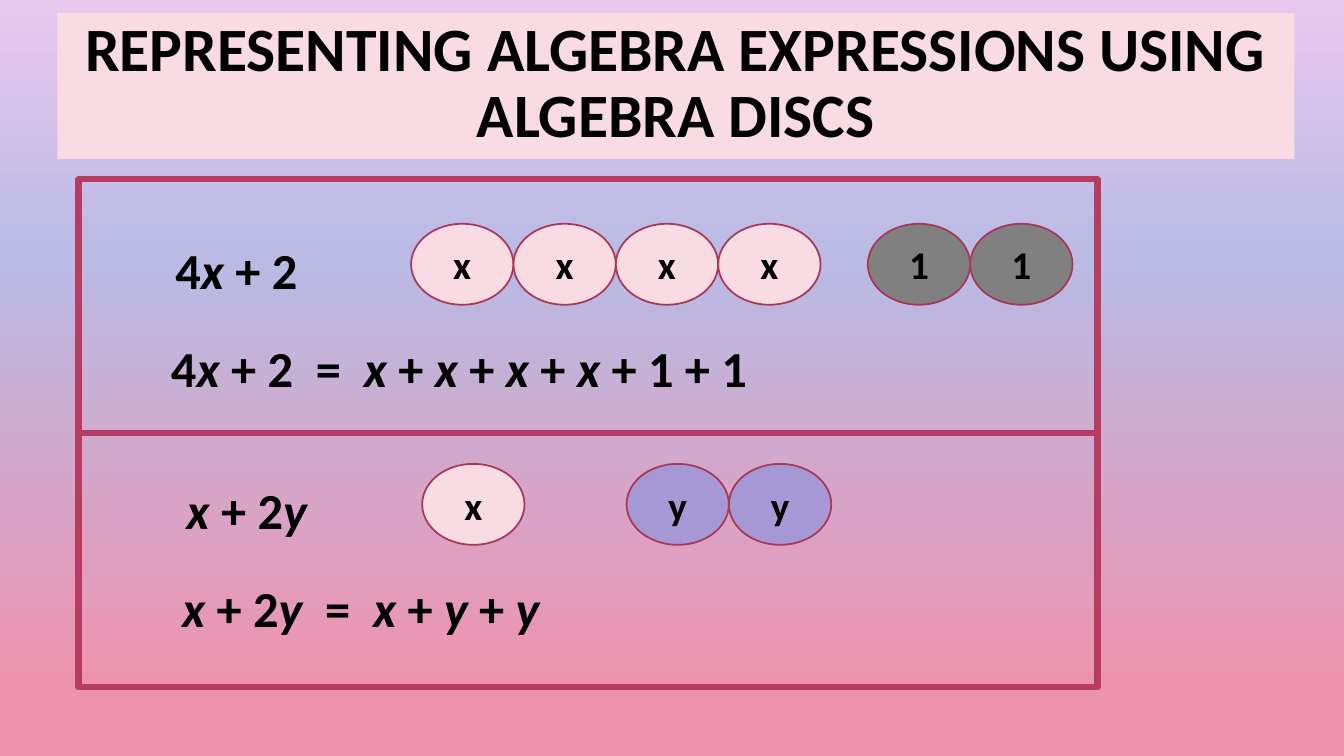
from copy import deepcopy
from itertools import groupby

from pptx import Presentation
from pptx.dml.color import RGBColor
from pptx.enum.shapes import MSO_SHAPE as Kind
from pptx.enum.text import MSO_ANCHOR as Anchor, MSO_AUTO_SIZE as Fit, PP_ALIGN as Align
from pptx.oxml.ns import qn
from pptx.util import Cm, Pt

BLACK = RGBColor(0x00, 0x00, 0x00)
PINK = RGBColor(0xF9, 0xDB, 0xE4)
GREY = RGBColor(0x80, 0x80, 0x80)
LILAC = RGBColor(0xA5, 0x98, 0xD4)
RIM = RGBColor(0xA8, 0x37, 0x5A)
FRAME = RGBColor(0xB6, 0x3C, 0x62)
SKY = [
    (0, RGBColor(0xE9, 0xC8, 0xEF)),
    (0.34, RGBColor(0xB9, 0xBB, 0xE5)),
    (0.91, RGBColor(0xEE, 0x93, 0xAF)),
]


def add_run(para, text, size, slant=False):
    run = para.add_run()
    run.text = text
    font = run.font
    font.name, font.size = "Calibri", Pt(size)
    font.bold, font.italic = True, slant
    font.color.rgb = BLACK


def add_form(kind, box, fill=None, line=None, width=0):
    form = slide.shapes.add_shape(kind, *map(Cm, box))
    form.shadow.inherit = False
    if fill is None:
        form.fill.background()
    else:
        form.fill.solid()
        form.fill.fore_color.rgb = fill
    if line is None:
        form.line.fill.background()
    else:
        form.line.color.rgb = line
        form.line.width = Pt(width)
    return form


deck = Presentation()
deck.slide_width, deck.slide_height = Cm(33.87), Cm(19.05)
slide = deck.slides.add_slide(deck.slide_layouts[6])

# Background: three colours from top to bottom
back = slide.background.fill
back.gradient()
back.gradient_angle = 270
stops = slide.background.fill.gradient_stops
row = next(slide.element.iter(qn("a:gsLst")))
row.append(deepcopy(row[-1]))
for stop, (spot, tint) in zip(back.gradient_stops, SKY):
    stop.position = spot
    stop.color.rgb = tint

# Title
title = add_form(Kind.RECTANGLE, (1.45, 0.33, 31.17, 3.68), PINK)
title.text_frame.vertical_anchor = Anchor.TOP
para = title.text_frame.paragraphs[0]
para.alignment = Align.CENTER
para.line_spacing = 0.9
add_run(para, "REPRESENTING ALGEBRA EXPRESSIONS USING ALGEBRA DISCS", 44)

# Panels: short form, expanded form, then groups of discs (offset, letters, fill)
PANELS = [
    ("4x + 2", "4x + 2  =  x + x + x + x + 1 + 1",
     [(0, "xxxx", PINK), (11.51, "11", GREY)]),
    ("x + 2y", "x + 2y  =  x + y + y",
     [(0, "x", PINK), (5.15, "yy", LILAC)]),
]
HIGH = 6.4
DISC_W, DISC_H = 2.58, 2.04

for num, (short, full, groups) in enumerate(PANELS):
    add_form(Kind.RECTANGLE, (1.98, 4.52 + num * HIGH, 25.68, HIGH),
             line=FRAME, width=4.5)
    left, top = num * 0.28, num * 6.05

    # Expressions, with the variables in italics
    for text, x, y, wide in [(short, 4.17, 5.89, 4.98), (full, 4.06, 8.38, 19.2)]:
        box = slide.shapes.add_textbox(Cm(x + left), Cm(y + top), Cm(wide), Cm(1.8))
        frame = box.text_frame
        frame.word_wrap = True
        frame.auto_size = Fit.SHAPE_TO_FIT_TEXT
        for slant, part in groupby(text, str.isalpha):
            add_run(frame.paragraphs[0], "".join(part), 36, slant)

    # Discs, touching side by side
    for shift, signs, fill in groups:
        for col, sign in enumerate(signs):
            spot = (10.36 + left + shift + col * DISC_W, 5.64 + top, DISC_W, DISC_H)
            disc = add_form(Kind.OVAL, spot, fill, RIM, 1.25)
            disc.text_frame.vertical_anchor = Anchor.MIDDLE
            para = disc.text_frame.paragraphs[0]
            para.alignment = Align.CENTER
            add_run(para, sign, 28)

deck.save("out.pptx")
